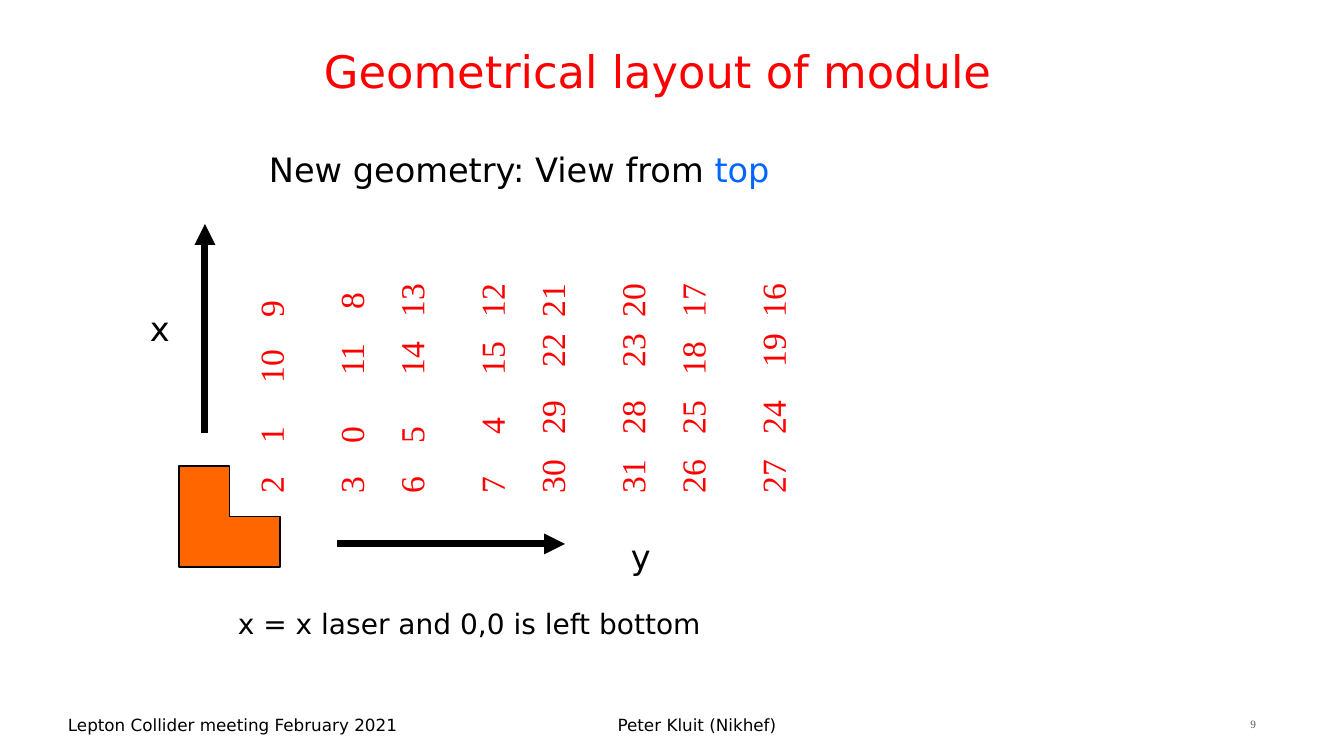
from dataclasses import dataclass
from typing import NamedTuple

from lxml.etree import SubElement
from pptx import Presentation
from pptx.dml.color import RGBColor
from pptx.enum.shapes import MSO_CONNECTOR, MSO_SHAPE
from pptx.enum.text import MSO_ANCHOR, PP_ALIGN
from pptx.oxml.ns import qn
from pptx.slide import Slide
from pptx.text.text import TextFrame
from pptx.util import Emu, Pt

EMU_PER_PX = 914400 / 100.8


@dataclass(frozen=True)
class Theme:
    sans: str = "DejaVu Sans"
    serif: str = "Times New Roman"
    black: str = "000000"
    red: str = "FF0000"
    blue: str = "0066FF"
    orange: str = "FF6600"
    grey: str = "5E574E"
    title: int = 32
    body: int = 24
    caption: int = 20
    footer: int = 12
    number: int = 8
    chip_line: float = 28.7


class Box(NamedTuple):
    left: int
    top: int
    width: int
    height: int


class Arrow(NamedTuple):
    x1: int
    y1: int
    x2: int
    y2: int


class ChipRow(NamedTuple):
    """Four chip numbers and the tab stops, in px, of the last three."""
    chips: tuple[int, ...]
    stops: tuple[int, ...]


THEME = Theme()

ARROWS = [Arrow(205, 433, 205, 224), Arrow(337, 544, 565, 544)]
CORNER = Box(179, 466, 101, 101)
CHIP_BOX = Box(327, 26, 354, 601)
CHIP_TOP_INSET = 47
CHIP_ROWS = [
    ChipRow((2, 1, 10, 9), (50, 110, 176)),
    ChipRow((3, 0, 11, 8), (50, 118, 184)),
    ChipRow((6, 5, 14, 13), (50, 118, 176)),
    ChipRow((7, 4, 15, 12), (59, 118, 176)),
    ChipRow((30, 29, 22, 21), (59, 126, 176)),
    ChipRow((31, 28, 23, 20), (59, 126, 176)),
    ChipRow((26, 25, 18, 17), (59, 118, 176)),
    ChipRow((27, 24, 19, 16), (59, 126, 176)),
]


def px(n: int) -> Emu:
    return Emu(round(n * EMU_PER_PX))


def rgb(color: str) -> RGBColor:
    return RGBColor.from_string(color)


def add_text(slide: Slide, box: Box, text: str, *, size: int = THEME.body,
             font: str = THEME.sans, color: str = THEME.black,
             accent: str = "", align: PP_ALIGN = PP_ALIGN.LEFT,
             anchor: MSO_ANCHOR = MSO_ANCHOR.TOP,
             rotation: int = 0) -> TextFrame:
    """Write one paragraph per line of text; accent follows in blue."""
    sp = slide.shapes.add_textbox(*map(px, box))
    sp.rotation = rotation
    tf = sp.text_frame
    tf.word_wrap = True
    tf.vertical_anchor = anchor
    for i, line in enumerate(text.split("\n")):
        p = tf.add_paragraph() if i else tf.paragraphs[0]
        p.alignment = align
        for part, part_color in ((line, color), (accent, THEME.blue)):
            if part:
                r = p.add_run()
                r.text = part
                r.font.name = font
                r.font.size = Pt(size)
                r.font.color.rgb = rgb(part_color)
    return tf


def add_chip_grid(slide: Slide) -> None:
    """Chip numbers, read upwards; the rows stand in pairs."""
    lines = ("\t".join(map(str, row.chips)) for row in CHIP_ROWS)
    tf = add_text(slide, CHIP_BOX, "\n".join(lines), font=THEME.serif,
                  color=THEME.red, rotation=270)
    tf.margin_top = px(CHIP_TOP_INSET)
    for i, (p, row) in enumerate(zip(tf.paragraphs, CHIP_ROWS)):
        tabs = SubElement(p._p.get_or_add_pPr(), qn("a:tabLst"))
        for stop in row.stops:
            SubElement(tabs, qn("a:tab"), pos=str(px(stop)), algn="l")
        p.line_spacing = Pt(THEME.chip_line)
        if i:
            p.space_before = Pt(THEME.chip_line if i % 2 else THEME.chip_line / 2)


def add_corner(slide: Slide) -> None:
    sp = slide.shapes.add_shape(MSO_SHAPE.CORNER, *map(px, CORNER))
    sp.shadow.inherit = False
    sp.fill.solid()
    sp.fill.fore_color.rgb = rgb(THEME.orange)
    sp.line.color.rgb = rgb(THEME.black)
    sp.line.width = Pt(1)


def add_arrow(slide: Slide, arrow: Arrow) -> None:
    cxn = slide.shapes.add_connector(MSO_CONNECTOR.STRAIGHT, *map(px, arrow))
    cxn.line.color.rgb = rgb(THEME.black)
    cxn.line.width = Pt(5)
    sp_pr = cxn._element.spPr
    SubElement(sp_pr.find(qn("a:ln")), qn("a:tailEnd"), type="triangle")
    SubElement(sp_pr, qn("a:effectLst"))


def add_footer(slide: Slide) -> None:
    bottom = MSO_ANCHOR.BOTTOM
    add_text(slide, Box(479, 696, 436, 44), "Peter Kluit (Nikhef)",
             size=THEME.footer, align=PP_ALIGN.CENTER, anchor=bottom)
    add_text(slide, Box(986, 686, 280, 50), "9", size=THEME.number,
             font=THEME.serif, color=THEME.grey, align=PP_ALIGN.RIGHT,
             anchor=bottom)
    add_text(slide, Box(58, 713, 541, 27),
             "Lepton Collider meeting February 2021",
             size=THEME.footer, anchor=bottom)


def main() -> None:
    prs = Presentation()
    prs.slide_width, prs.slide_height = px(1344), px(756)
    slide = prs.slides.add_slide(prs.slide_layouts[6])

    add_footer(slide)
    add_text(slide, Box(314, 13, 1030, 89), "Geometrical layout of module",
             size=THEME.title, color=THEME.red, anchor=MSO_ANCHOR.BOTTOM)
    add_text(slide, Box(259, 144, 924, 50), "New geometry: View from ",
             accent="top")
    add_corner(slide)
    add_chip_grid(slide)
    add_text(slide, Box(228, 602, 948, 44),
             "x = x laser and 0,0 is left bottom", size=THEME.caption)
    for arrow in ARROWS:
        add_arrow(slide, arrow)
    add_text(slide, Box(140, 303, 40, 50), "x")
    add_text(slide, Box(621, 531, 40, 50), "y")
    prs.save("out.pptx")


if __name__ == "__main__":
    main()
